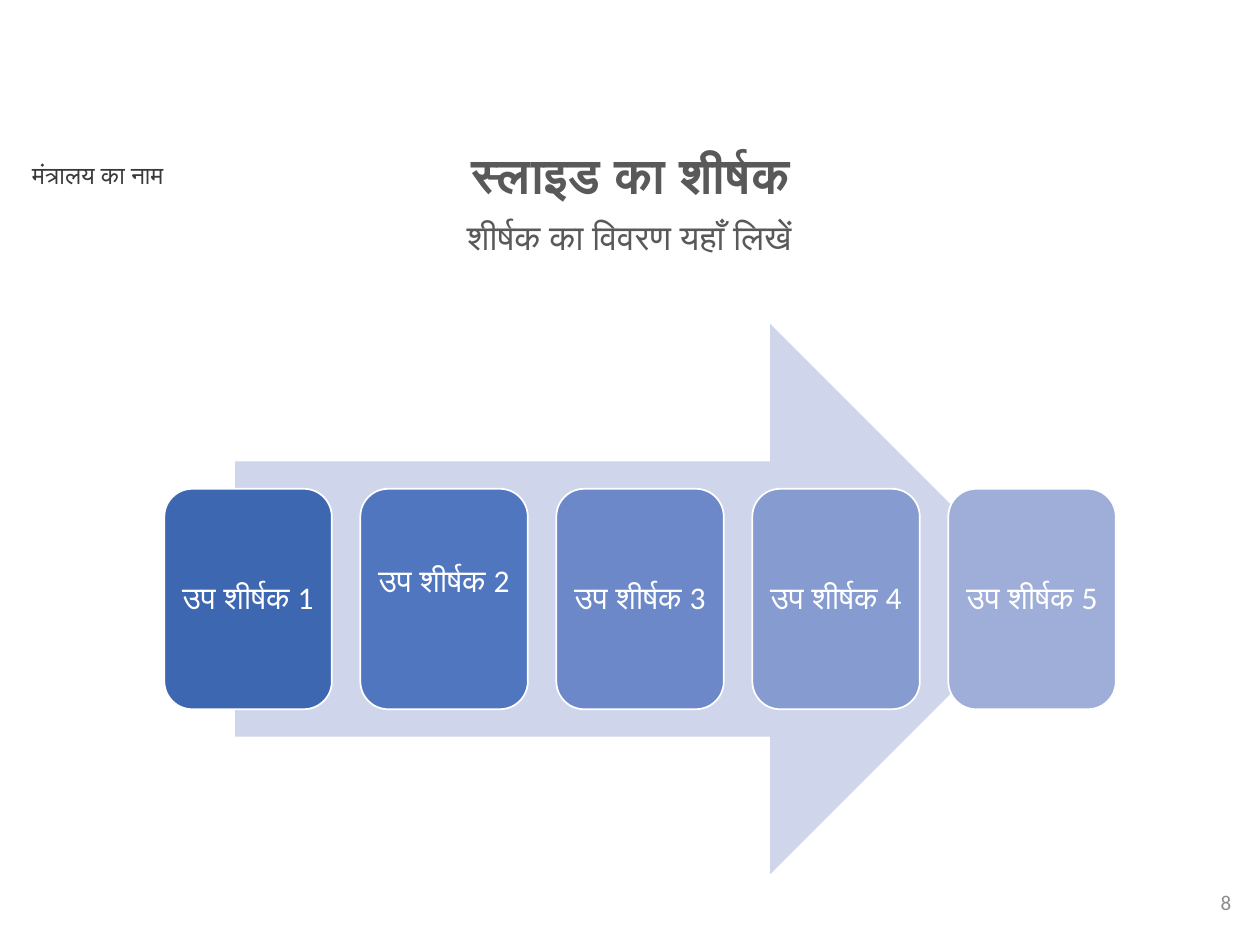
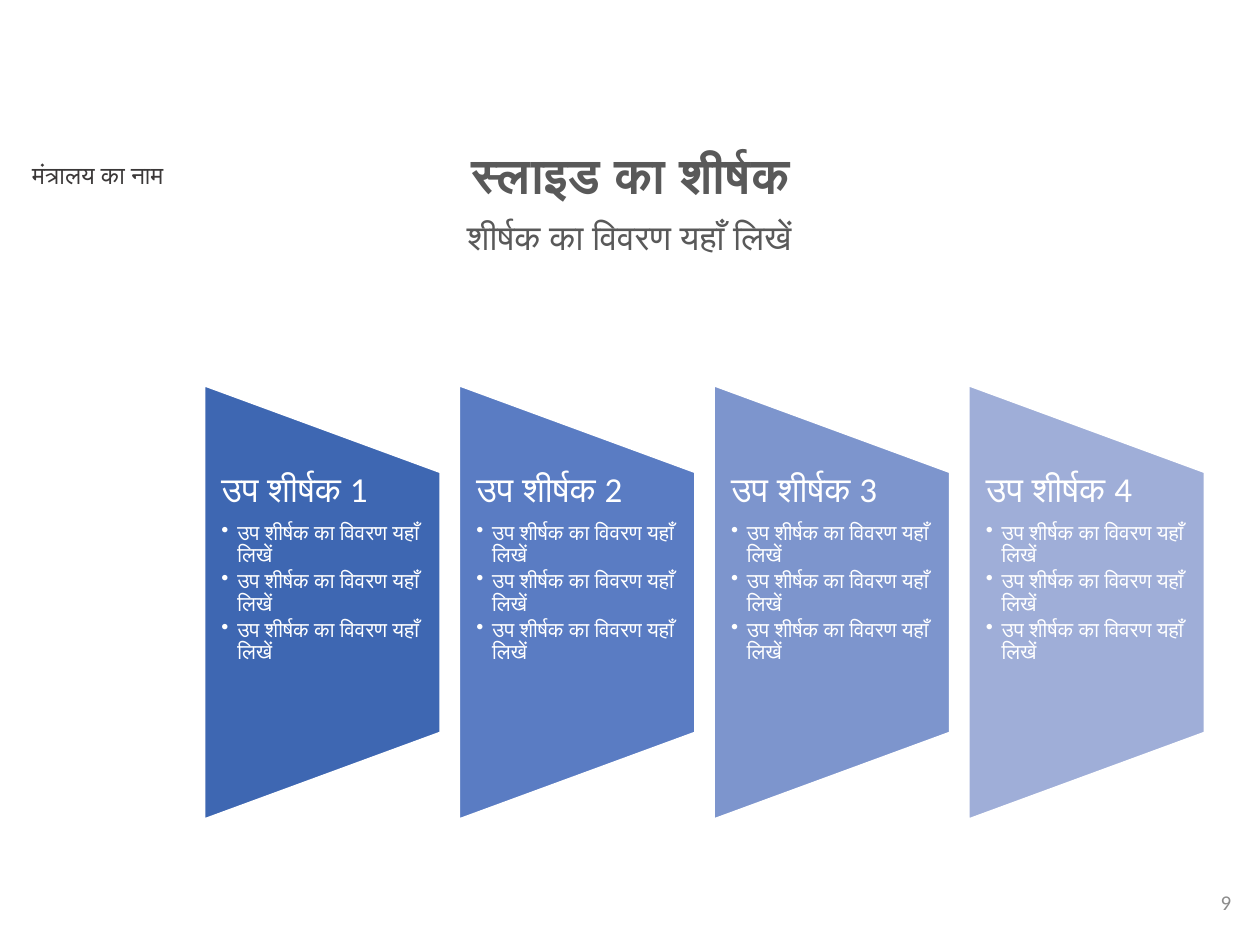
import dataclasses
import typing

import lxml.etree
import pptx
import pptx.dml.color
import pptx.enum.shapes
import pptx.enum.text
import pptx.oxml.ns
import pptx.util

Pt = pptx.util.Pt
Shapes = pptx.enum.shapes.MSO_SHAPE
Align = pptx.enum.text.PP_ALIGN
Anchor = pptx.enum.text.MSO_ANCHOR

FONT = "Calibri"
WHITE = "FFFFFF"
GREY = "595959"
DETAIL = "उप शीर्षक का विवरण यहाँ लिखें"


@dataclasses.dataclass(frozen=True)
class Area:
    left: float
    top: float
    width: float
    height: float


@dataclasses.dataclass(frozen=True)
class TextStyle:
    size: float
    color: str
    align: Align = Align.CENTER
    bold: bool = False
    line_spacing: float = 0.9
    space_after: float = 0
    bullet_indent: float = 0


@dataclasses.dataclass(frozen=True)
class Line:
    text: str
    style: TextStyle


@dataclasses.dataclass(frozen=True)
class Label:
    area: Area
    line: Line
    anchor: Anchor = Anchor.TOP


@dataclasses.dataclass(frozen=True)
class Step:
    text: str
    fill: str
    lift: float = 0


PAGE_NUMBER = TextStyle(12, "8C8C8C", Align.RIGHT, line_spacing=1)
CARD_TEXT = TextStyle(18, WHITE, space_after=6.3)
PANEL_HEADING = TextStyle(20, WHITE, Align.LEFT, space_after=7)
PANEL_DETAIL = TextStyle(12, WHITE, Align.LEFT, space_after=1.8, bullet_indent=9)

HEADER = [
    Label(Area(0, 87.84, 111.6, 24.5),
          Line("मंत्रालय का नाम", TextStyle(14, "3B3838", line_spacing=1))),
    Label(Area(105.1, 122.4, 509, 45.4),
          Line("शीर्षक का विवरण यहाँ लिखें", TextStyle(20, GREY))),
    Label(Area(133.9, 82.8, 452.9, 33.8),
          Line("स्लाइड का शीर्षक", TextStyle(28, GREY, bold=True))),
]

ARROW = Area(134.4, 185, 463, 314.6)
FIRST_CARD = Area(93.9, 279.3, 95.76, 126)
CARD_PITCH = 112
CARDS = [
    Step("उप शीर्षक 1", "3E67B2"),
    Step("उप शीर्षक 2", "5176C0", lift=9.7),
    Step("उप शीर्षक 3", "6C88C8"),
    Step("उप शीर्षक 4", "869BD0"),
    Step("उप शीर्षक 5", "9FAED8"),
]

FIRST_PANEL = Area(116.6, 220, 135.2, 248.4)
PANEL_PITCH = 145.6
PANEL_TEXT_HEIGHT = 149
PANELS = [
    Step("उप शीर्षक 1", "3E67B2"),
    Step("उप शीर्षक 2", "5A7CC3"),
    Step("उप शीर्षक 3", "7D95CD"),
    Step("उप शीर्षक 4", "9FAED8"),
]


def rgb(color: str) -> pptx.dml.color.RGBColor:
    return pptx.dml.color.RGBColor.from_string(color)


def bounds(area: Area) -> tuple:
    return Pt(area.left), Pt(area.top), Pt(area.width), Pt(area.height)


def shifted(area: Area, distance: float) -> Area:
    return dataclasses.replace(area, left=area.left + distance)


def write(frame: typing.Any, lines: list[Line], anchor: Anchor) -> None:
    frame.word_wrap = True
    frame.vertical_anchor = anchor
    for index, line in enumerate(lines):
        style = line.style
        para = frame.add_paragraph() if index else frame.paragraphs[0]
        para.text = line.text
        if style.bullet_indent:
            indent = Pt(style.bullet_indent)
            properties = para._p.get_or_add_pPr()
            properties.set("marL", str(indent))
            properties.set("indent", str(-indent))
            lxml.etree.SubElement(properties, pptx.oxml.ns.qn("a:buChar"), char="•")
        para.alignment = style.align
        para.line_spacing = style.line_spacing
        para.space_after = Pt(style.space_after)
        para.font.name = FONT
        para.font.size = Pt(style.size)
        para.font.bold = style.bold
        para.font.color.rgb = rgb(style.color)


def add_label(page: typing.Any, label: Label) -> None:
    box = page.shapes.add_textbox(*bounds(label.area))
    write(box.text_frame, [label.line], label.anchor)


def add_figure(page: typing.Any, kind: Shapes, area: Area, fill: str,
               line_width: float = 0) -> typing.Any:
    figure = page.shapes.add_shape(kind, *bounds(area))
    figure.shadow.inherit = False
    figure.fill.solid()
    figure.fill.fore_color.rgb = rgb(fill)
    if line_width:
        figure.line.color.rgb = rgb(WHITE)
        figure.line.width = Pt(line_width)
    else:
        figure.line.fill.background()
    return figure


def add_card(page: typing.Any, area: Area, step: Step) -> None:
    card = add_figure(page, Shapes.ROUNDED_RECTANGLE, area, step.fill, 1)
    frame = card.text_frame
    frame.margin_left = frame.margin_right = frame.margin_top = Pt(4.8)
    frame.margin_bottom = Pt(4.8 + 2 * step.lift)
    write(frame, [Line(step.text, CARD_TEXT)], Anchor.MIDDLE)


def add_panel(page: typing.Any, area: Area, step: Step) -> None:
    turn = (area.height - area.width) / 2
    lying = Area(area.left - turn, area.top + turn, area.height, area.width)
    panel = add_figure(page, Shapes.FLOWCHART_MANUAL_OPERATION, lying, step.fill, 1.5)
    panel.rotation = 270
    text_top = area.top + (area.height - PANEL_TEXT_HEIGHT) / 2
    text_area = Area(area.left, text_top, area.width, PANEL_TEXT_HEIGHT)
    frame = page.shapes.add_textbox(*bounds(text_area)).text_frame
    frame.margin_left = frame.margin_right = Pt(10)
    frame.margin_top = frame.margin_bottom = Pt(0)
    lines = [Line(step.text, PANEL_HEADING)] + [Line(DETAIL, PANEL_DETAIL)] * 3
    write(frame, lines, Anchor.TOP)


def add_page(deck: typing.Any, number: int) -> typing.Any:
    page = deck.slides.add_slide(deck.slide_layouts[6])
    number_label = Label(Area(548.6, 501.1, 162, 28.8),
                         Line(str(number), PAGE_NUMBER), Anchor.MIDDLE)
    for label in [*HEADER, number_label]:
        add_label(page, label)
    return page


def main() -> None:
    deck = pptx.Presentation()
    deck.slide_width = Pt(720)
    deck.slide_height = Pt(540)

    process_page = add_page(deck, 8)
    add_figure(process_page, Shapes.RIGHT_ARROW, ARROW, "CFD5EA")
    for index, step in enumerate(CARDS):
        add_card(process_page, shifted(FIRST_CARD, index * CARD_PITCH), step)

    panel_page = add_page(deck, 9)
    for index, step in enumerate(PANELS):
        add_panel(panel_page, shifted(FIRST_PANEL, index * PANEL_PITCH), step)

    deck.save("out.pptx")


if __name__ == "__main__":
    main()
